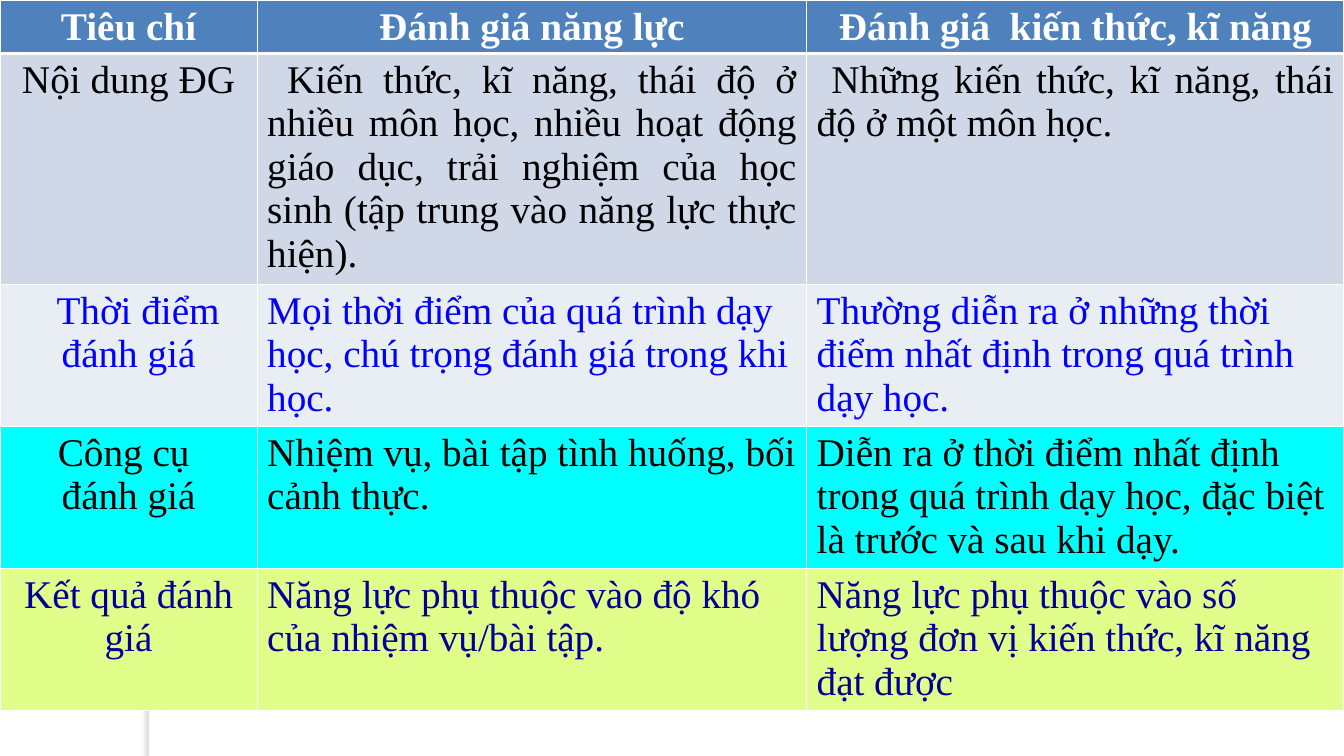
from dataclasses import dataclass

from lxml import etree
from pptx import Presentation
from pptx.dml.color import RGBColor
from pptx.enum.shapes import MSO_SHAPE
from pptx.enum.text import PP_ALIGN
from pptx.oxml.ns import qn
from pptx.slide import Slide
from pptx.table import _Cell
from pptx.util import Inches, Pt

RECT = MSO_SHAPE.RECTANGLE
LEFT, MID, JUST = PP_ALIGN.LEFT, PP_ALIGN.CENTER, PP_ALIGN.JUSTIFY

WHITE = RGBColor(0xFF, 0xFF, 0xFF)
BLACK = RGBColor(0, 0, 0)
BLUE = RGBColor(0, 0, 0xFF)
NAVY = RGBColor(0, 0, 0x99)
STEEL = RGBColor(0x4F, 0x81, 0xBD)
MIST = RGBColor(0xD0, 0xD8, 0xE8)
PALE = RGBColor(0xE9, 0xED, 0xF4)
CYAN = RGBColor(0, 0xFF, 0xFF)
LIME = RGBColor(0xE2, 0xFE, 0x8A)
SHADE = RGBColor(0x77, 0x75, 0x6F)

FONT = "Times New Roman"
WIDTHS = (2.55, 5.45, 5.33)


@dataclass
class Row:
    texts: tuple[str, str, str]
    fill: RGBColor
    color: RGBColor
    height: float = 1.41
    align: PP_ALIGN = LEFT
    bold: bool = False
    indent: float = 0  # first line of the criterion, in inches


ROWS = (
    Row(("Tiêu chí", "Đánh giá năng lực", "Đánh giá  kiến thức, kĩ năng"),
        STEEL, WHITE, height=0.53, align=MID, bold=True),
    Row(("Nội dung ĐG",
         " Kiến thức, kĩ năng, thái độ ở nhiều môn học, nhiều hoạt động giáo dục, "
         "trải nghiệm của học sinh (tập trung vào năng lực thực hiện).",
         " Những kiến thức, kĩ năng, thái độ ở một môn học."),
        MIST, BLACK, height=2.29, align=JUST),
    Row(("Thời điểm đánh giá",
         "Mọi thời điểm của quá trình dạy học, chú trọng đánh giá trong khi học.",
         "Thường diễn ra ở những thời điểm nhất định trong quá trình dạy học."),
        PALE, BLUE, indent=0.19),
    Row(("Công cụ \nđánh giá",
         "Nhiệm vụ, bài tập tình huống, bối cảnh thực.",
         "Diễn ra ở thời điểm nhất định trong quá trình dạy học, đặc biệt là "
         "trước và sau khi dạy."),
        CYAN, BLACK),
    Row(("Kết quả đánh giá",
         "Năng lực phụ thuộc vào độ khó của nhiệm vụ/bài tập.",
         "Năng lực phụ thuộc vào số lượng đơn vị kiến thức, kĩ năng đạt được"),
        LIME, NAVY),
)


def write(cell: _Cell, text: str, *, color: RGBColor, align: PP_ALIGN,
          bold: bool = False, indent: float = 0) -> None:
    frame = cell.text_frame
    for i, line in enumerate(text.split("\n")):
        para = frame.add_paragraph() if i else frame.paragraphs[0]
        para.alignment = align
        if indent:
            para._p.get_or_add_pPr().set("indent", str(Inches(indent)))
        run = para.add_run()
        run.text = line
        font = run.font
        font.name, font.size, font.bold = FONT, Pt(28), bold
        font.color.rgb = color


def add_color(parent: etree._Element, color: RGBColor) -> etree._Element:
    node = etree.SubElement(parent, qn("a:srgbClr"))
    node.set("val", str(color))
    return node


def edge(cell: _Cell, top: float, base: float) -> None:
    """Draw white borders, with their own widths in points above and below."""
    props = cell._tc.get_or_add_tcPr()
    for side, width in (("L", 1), ("R", 1), ("T", top), ("B", base)):
        line = etree.SubElement(props, qn(f"a:ln{side}"), w=str(Pt(width)))
        add_color(etree.SubElement(line, qn("a:solidFill")), WHITE)


def add_strip(slide: Slide) -> None:
    """Add the white upright strip that casts a soft shadow to its left."""
    strip = slide.shapes.add_shape(
        RECT, Inches(1.48), 0, Inches(0.11), Inches(7.5))
    strip.fill.solid()
    strip.fill.fore_color.rgb = WHITE
    strip.line.fill.background()
    strip.shadow.inherit = False
    effects = strip._element.spPr.find(qn("a:effectLst"))
    shadow = etree.SubElement(
        effects, qn("a:outerShdw"), blurRad=str(Pt(3)), dist=str(Pt(3)),
        dir=str(180 * 60000), algn="ctr", rotWithShape="0")
    etree.SubElement(add_color(shadow, SHADE), qn("a:alpha"), val="25000")


def add_grid(slide: Slide) -> None:
    high = sum(row.height for row in ROWS)
    table = slide.shapes.add_table(
        len(ROWS), len(WIDTHS), 0, 0, Inches(sum(WIDTHS)), Inches(high)).table
    table.horz_banding = False
    for col, width in zip(table.columns, WIDTHS):
        col.width = Inches(width)
    for r, row in enumerate(ROWS):
        table.rows[r].height = Inches(row.height)
        for c, text in enumerate(row.texts):
            cell = table.cell(r, c)
            edge(cell, top=3 if r == 1 else 1, base=3 if r == 0 else 1)
            cell.fill.solid()
            cell.fill.fore_color.rgb = row.fill
            first = c == 0
            write(cell, text, color=row.color, bold=row.bold,
                  align=MID if first else row.align,
                  indent=row.indent if first else 0)


def main() -> None:
    deck = Presentation()
    deck.slide_width, deck.slide_height = Inches(13.33), Inches(7.5)
    slide = deck.slides.add_slide(deck.slide_layouts[6])
    add_strip(slide)
    add_grid(slide)
    deck.save("out.pptx")


if __name__ == "__main__":
    main()
